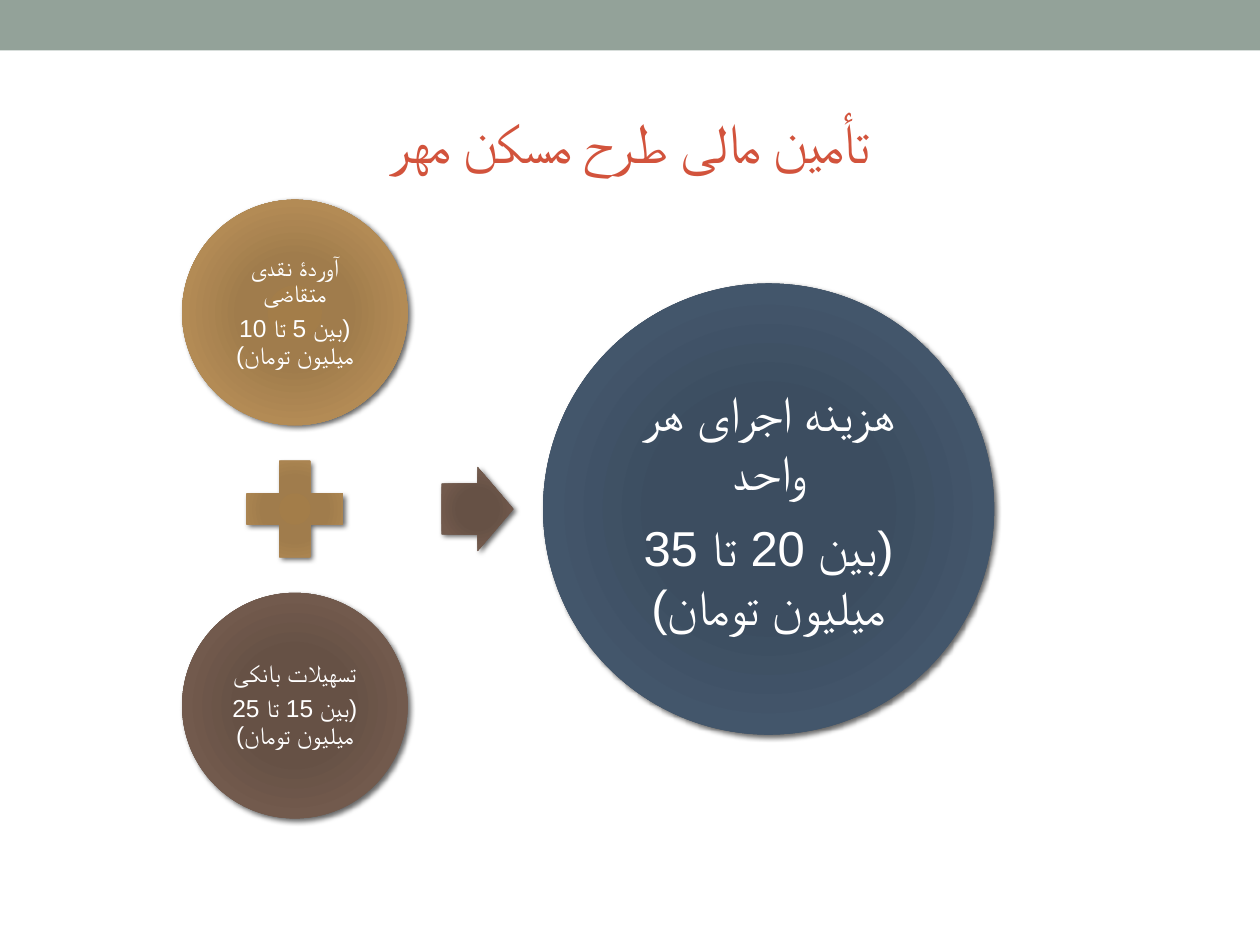
from lxml.etree import SubElement
from pptx import Presentation
from pptx.dml.color import RGBColor
from pptx.enum.shapes import MSO_SHAPE
from pptx.enum.text import MSO_ANCHOR, PP_ALIGN
from pptx.oxml import parse_xml
from pptx.oxml.ns import nsdecls, qn
from pptx.util import Inches, Pt

COLORS = {"bar": "93A299", "title": "D2533C", "white": "FFFFFF", "shadow": "000000"}
GRADIENTS = {
    "gold": ("A37D49", "A07C4C", "B38B55", "AD8F67"),
    "brown": ("685044", "665145", "725A4D", "726056"),
    "blue": ("3B4D61", "3C4D60", "43566B", "4C5A6A"),
}
STOPS = (0, 34, 70, 100)
FONT = "Arial"
SOURCES_X = 2.34  # centre of the column of funding sources
MIDDLE_Y = 4.04   # centre line of the whole equation


def write_text(shape, lines, size, color="white", inset=None, rtl=True,
               line_spacing=None, gap=0.0, tracking=None):
    """Write centred paragraphs; gap is a share of the text size."""
    frame = shape.text_frame
    frame.word_wrap = True
    frame.vertical_anchor = MSO_ANCHOR.MIDDLE
    if inset is not None:
        frame.margin_left = frame.margin_right = Inches(inset)
        frame.margin_top = frame.margin_bottom = Inches(inset)
    for index, line in enumerate(lines):
        paragraph = frame.paragraphs[0] if index == 0 else frame.add_paragraph()
        paragraph.alignment = PP_ALIGN.CENTER
        paragraph.space_after = Pt(size * gap)
        if line_spacing:
            paragraph.line_spacing = line_spacing
        if rtl:
            paragraph._p.get_or_add_pPr().set("rtl", "1")
        run = paragraph.add_run()
        run.text = line
        run.font.size = Pt(size)
        run.font.color.rgb = RGBColor.from_string(COLORS[color])
        run.font.name = FONT
        properties = run._r.get_or_add_rPr()
        SubElement(properties, qn("a:cs"), typeface=FONT)
        if tracking is not None:
            properties.set("spc", str(tracking * 100))


def apply_gradient(shape, name):
    """Fill a shape with a radial gradient."""
    stops = "".join(
        f'<a:gs pos="{stop * 1000}"><a:srgbClr val="{color}"/></a:gs>'
        for stop, color in zip(STOPS, GRADIENTS[name]))
    gradient = parse_xml(
        f'<a:gradFill {nsdecls("a")} rotWithShape="1"><a:gsLst>{stops}</a:gsLst>'
        '<a:path path="circle"><a:fillToRect l="100000" t="100000" '
        'r="100000" b="100000"/></a:path></a:gradFill>')
    shape.fill.background()
    properties = shape._element.spPr
    properties.replace(properties.find(qn("a:noFill")), gradient)


def apply_shadow(shape):
    """Add a soft shadow towards the lower right."""
    shape.shadow.inherit = False
    effects = shape._element.spPr.find(qn("a:effectLst"))
    effects.append(parse_xml(
        f'<a:outerShdw {nsdecls("a")} blurRad="{Pt(3)}" dist="{Pt(2)}" '
        f'dir="{45 * 60000}" algn="tl" rotWithShape="0">'
        f'<a:srgbClr val="{COLORS["shadow"]}"><a:alpha val="60000"/></a:srgbClr>'
        '</a:outerShdw>'))


def add_part(slide, kind, center_x, center_y, width, height, gradient):
    """Add one shaded part of the equation around its centre."""
    part = slide.shapes.add_shape(
        kind, Inches(center_x - width / 2), Inches(center_y - height / 2),
        Inches(width), Inches(height))
    apply_gradient(part, gradient)
    part.line.fill.background()
    apply_shadow(part)
    return part


def add_circle(slide, center_x, center_y, diameter, gradient, lines, size, **text_format):
    circle = add_part(slide, MSO_SHAPE.OVAL, center_x, center_y,
                      diameter, diameter, gradient)
    write_text(circle, lines, size, gap=0.35, **text_format)


def add_top_bar(slide):
    bar = slide.shapes.add_shape(MSO_SHAPE.RECTANGLE, 0, 0, Inches(10), Inches(0.4))
    bar.fill.solid()
    bar.fill.fore_color.rgb = RGBColor.from_string(COLORS["bar"])
    bar.line.fill.background()
    bar.shadow.inherit = False


def add_title(slide, text):
    title = slide.shapes.title
    title.left, title.top = Inches(0.5), Inches(0.58)
    title.width, title.height = Inches(9), Inches(1.08)
    write_text(title, [text], 32, color="title", rtl=False, tracking=-1)


def main():
    presentation = Presentation()
    presentation.slide_width, presentation.slide_height = Inches(10), Inches(7.5)
    slide = presentation.slides.add_slide(presentation.slide_layouts[5])

    add_top_bar(slide)
    add_title(slide, "تأمین مالی طرح مسکن مهر")

    # Funding sources, above and below the plus sign
    sources = (
        (-1, "gold", ["آوردۀ نقدی متقاضی", "(بین 5 تا 10 میلیون تومان)"]),
        (1, "brown", ["تسهیلات بانکی", "(بین 15 تا 25 میلیون تومان)"]),
    )
    for side, gradient, lines in sources:
        add_circle(slide, SOURCES_X, MIDDLE_Y + side * 1.56, 1.79, gradient, lines, 14,
                   inset=0.02, line_spacing=0.9)
    add_part(slide, MSO_SHAPE.MATH_PLUS, SOURCES_X, MIDDLE_Y, 1.04, 1.04, "gold")

    # Arrow to the total cost
    arrow = add_part(slide, MSO_SHAPE.RIGHT_ARROW, 3.79, MIDDLE_Y, 0.57, 0.67, "brown")
    arrow.adjustments[0] = 0.6
    arrow.adjustments[1] = 0.5
    add_circle(slide, 6.1, MIDDLE_Y, 3.58, "blue",
               ["هزینه اجرای هر واحد", "(بین 20 تا 35 میلیون تومان)"], 28, inset=0.04)

    presentation.save("out.pptx")


if __name__ == "__main__":
    main()
